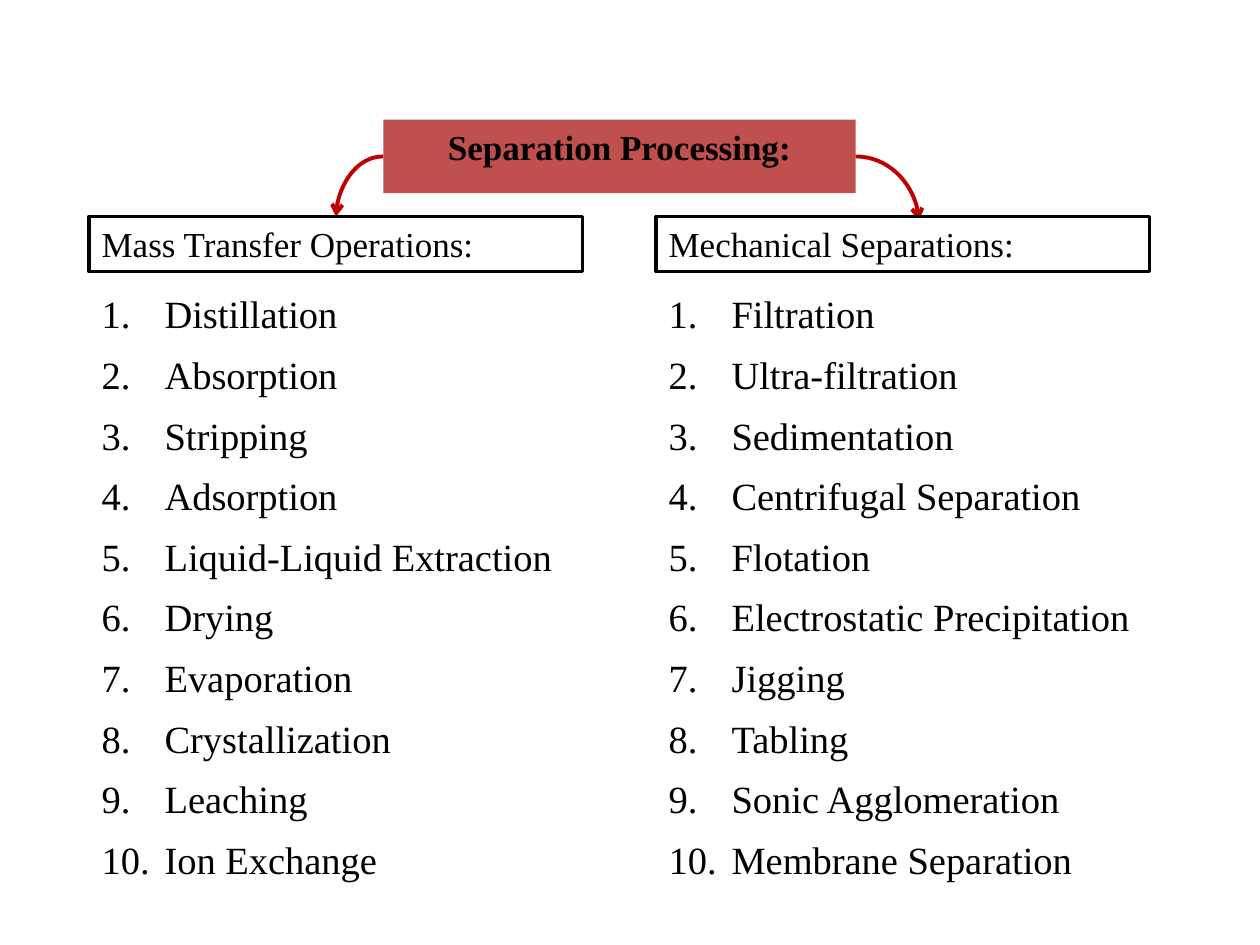
import dataclasses

import lxml.etree
import pptx
import pptx.dml.color
import pptx.enum.shapes
import pptx.enum.text
import pptx.oxml.ns
import pptx.util

COLUMNS, ROWS = 240, 180
WIDTH, HEIGHT = pptx.util.Inches(10), pptx.util.Inches(7.5)
FONT = "Times New Roman"
COLORS = {"banner": "C0504D", "arrow": "C00000", "ink": "000000", "paper": "FFFFFF"}


@dataclasses.dataclass(frozen=True)
class Area:
    column: float
    row: float
    columns: float
    rows: float

    def box(self) -> tuple[int, int, int, int]:
        return across(self.column), down(self.row), across(self.columns), down(self.rows)


@dataclasses.dataclass(frozen=True)
class Branch:
    heading: str
    column: float
    arrow_start: float
    arrow_end: float
    arrow_bottom: float
    operations: tuple[str, ...]


BANNER = Area(73, 22.8, 90, 14)
HEADING_ROW, HEADING_COLUMNS, HEADING_ROWS = 41.25, 94, 10.5
LIST_ROW, LIST_COLUMNS, LIST_ROWS = 53.25, 98, 104

BRANCHES = (
    Branch("Mass Transfer Operations:", 17, BANNER.column, 64, HEADING_ROW, (
        "Distillation", "Absorption", "Stripping", "Adsorption",
        "Liquid-Liquid Extraction", "Drying", "Evaporation",
        "Crystallization", "Leaching", "Ion Exchange")),
    Branch("Mechanical Separations:", 125, BANNER.column + BANNER.columns, 175, 42, (
        "Filtration", "Ultra-filtration", "Sedimentation",
        "Centrifugal Separation", "Flotation", "Electrostatic Precipitation",
        "Jigging", "Tabling", "Sonic Agglomeration", "Membrane Separation")),
)


def across(columns: float) -> int:
    return round(WIDTH * columns / COLUMNS)


def down(rows: float) -> int:
    return round(HEIGHT * rows / ROWS)


def color(name: str) -> pptx.dml.color.RGBColor:
    return pptx.dml.color.RGBColor.from_string(COLORS[name])


def add_run(paragraph, text: str, size: float, bold: bool = False) -> None:
    run = paragraph.add_run()
    run.text = text
    run.font.name = FONT
    run.font.size = pptx.util.Pt(size)
    run.font.bold = bold
    run.font.color.rgb = color("ink")


def add_panel(slide, area: Area, fill: str, text: str, alignment, anchor, bold: bool = False):
    shape = slide.shapes.add_shape(pptx.enum.shapes.MSO_SHAPE.RECTANGLE, *area.box())
    shape.shadow.inherit = False
    shape.fill.solid()
    shape.fill.fore_color.rgb = color(fill)
    shape.line.fill.background()
    shape.text_frame.word_wrap = True
    shape.text_frame.vertical_anchor = anchor
    paragraph = shape.text_frame.paragraphs[0]
    paragraph.alignment = alignment
    add_run(paragraph, text, 20, bold)
    return shape


def add_arrow(slide, branch: Branch) -> None:
    connector = slide.shapes.add_connector(
        pptx.enum.shapes.MSO_CONNECTOR.CURVE,
        across(branch.arrow_start), down(BANNER.row + BANNER.rows / 2),
        across(branch.arrow_end), down(branch.arrow_bottom))
    connector.line.color.rgb = color("arrow")
    connector.line.width = pptx.util.Pt(2.25)
    properties = connector.element.spPr
    properties.find(pptx.oxml.ns.qn("a:prstGeom")).set("prst", "curvedConnector2")
    line = properties.find(pptx.oxml.ns.qn("a:ln"))
    lxml.etree.SubElement(line, pptx.oxml.ns.qn("a:tailEnd"), type="arrow")
    lxml.etree.SubElement(properties, pptx.oxml.ns.qn("a:effectLst"))


def add_heading(slide, branch: Branch) -> None:
    area = Area(branch.column, HEADING_ROW, HEADING_COLUMNS, HEADING_ROWS)
    heading = add_panel(slide, area, "paper", branch.heading,
                        pptx.enum.text.PP_ALIGN.LEFT, pptx.enum.text.MSO_ANCHOR.TOP)
    heading.line.color.rgb = color("ink")
    heading.line.width = pptx.util.Pt(2)
    heading.text_frame.auto_size = pptx.enum.text.MSO_AUTO_SIZE.SHAPE_TO_FIT_TEXT


def add_numbered_list(slide, branch: Branch) -> None:
    area = Area(branch.column, LIST_ROW, LIST_COLUMNS, LIST_ROWS)
    frame = slide.shapes.add_textbox(*area.box()).text_frame
    frame.word_wrap = True
    indent = across(12)
    for index, operation in enumerate(branch.operations):
        paragraph = frame.add_paragraph() if index else frame.paragraphs[0]
        paragraph.line_spacing = 1.1
        paragraph.space_before = pptx.util.Pt(5.6 if index else 0)
        properties = paragraph._p.get_or_add_pPr()
        properties.set("marL", str(indent))
        properties.set("indent", str(-indent))
        lxml.etree.SubElement(properties, pptx.oxml.ns.qn("a:buFont"), typeface="+mj-lt")
        lxml.etree.SubElement(properties, pptx.oxml.ns.qn("a:buAutoNum"), type="arabicPeriod")
        add_run(paragraph, operation, 22)


def main() -> None:
    presentation = pptx.Presentation()
    presentation.slide_width, presentation.slide_height = WIDTH, HEIGHT
    slide = presentation.slides.add_slide(presentation.slide_layouts[6])
    add_panel(slide, BANNER, "banner", "Separation Processing:",
              pptx.enum.text.PP_ALIGN.CENTER, pptx.enum.text.MSO_ANCHOR.TOP, bold=True)
    for add_part in (add_arrow, add_heading, add_numbered_list):
        for branch in BRANCHES:
            add_part(slide, branch)
    presentation.save("out.pptx")


if __name__ == "__main__":
    main()
